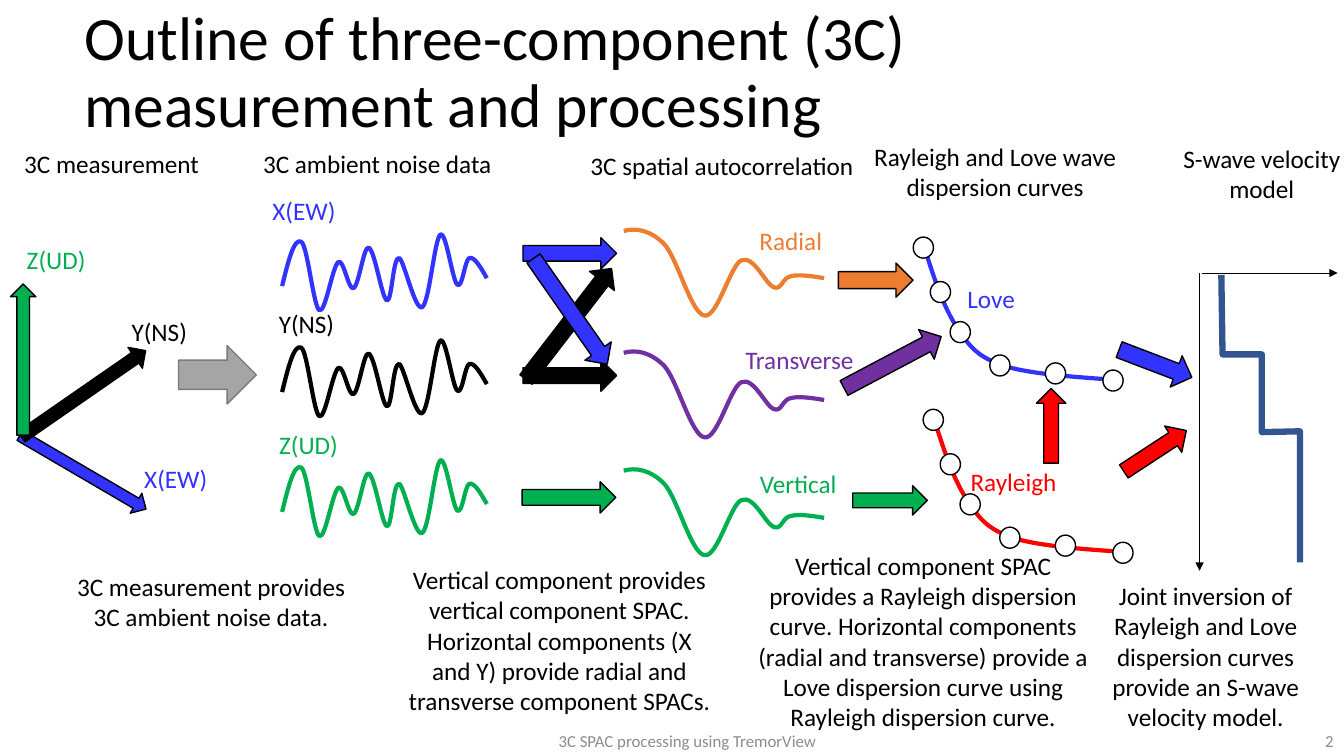
import pptx
import pptx.dml.color
import pptx.enum.shapes
import pptx.enum.text
import pptx.oxml.ns
import pptx.util
from lxml import etree

Cm = pptx.util.Cm
Pt = pptx.util.Pt
qn = pptx.oxml.ns.qn
RGB = pptx.dml.color.RGBColor.from_string
Preset = pptx.enum.shapes.MSO_SHAPE
Align = pptx.enum.text.PP_ALIGN
Anchor = pptx.enum.text.MSO_ANCHOR


class Theme:
    font = "Calibri"
    title_size, body_size, footer_size = Pt(44), Pt(18), Pt(12)
    curve_width, model_width, outline_width, axis_width = Pt(3), Pt(4.5), Pt(1), Pt(0.5)
    black, white = RGB("000000"), RGB("FFFFFF")
    blue, green, red = RGB("3333FF"), RGB("00B050"), RGB("FF0000")
    orange, purple, navy = RGB("ED7D31"), RGB("7030A0"), RGB("325491")
    gray, dark_gray, footer = RGB("A5A5A5"), RGB("7A7A7A"), RGB("8C8C8C")


presentation = pptx.Presentation()
presentation.slide_width, presentation.slide_height = Cm(33.87), Cm(19.05)
slide = presentation.slides.add_slide(presentation.slide_layouts[6])
shapes = slide.shapes


def add_text(text, left, top, width, height, color=Theme.black, size=Theme.body_size,
             align=Align.CENTER, anchor=Anchor.TOP):
    box = shapes.add_textbox(Cm(left), Cm(top), Cm(width), Cm(height))
    frame = box.text_frame
    frame.word_wrap = True
    frame.vertical_anchor = anchor
    paragraph = frame.paragraphs[0]
    paragraph.text = text
    paragraph.alignment = align
    paragraph.font.name = Theme.font
    paragraph.font.size = size
    paragraph.font.color.rgb = color
    return paragraph


def add_open_path(left, top, offsets, color, width, curved=True):
    """Draw from (left, top) through offsets; curved paths take them in threes as Bezier points."""
    builder = shapes.build_freeform(Cm(left), Cm(top))
    builder.add_line_segments([(Cm(left + x), Cm(top + y)) for x, y in offsets], close=False)
    shape = builder.convert_to_shape()
    shape.shadow.inherit = False
    shape.fill.background()
    shape.line.color.rgb = color
    shape.line.width = width
    if curved:
        path = shape._element.find(".//" + qn("a:path"))
        segments = path.findall(qn("a:lnTo"))
        for first in range(0, len(segments), 3):
            curve = etree.SubElement(path, qn("a:cubicBezTo"))
            for segment in segments[first:first + 3]:
                curve.append(segment[0])
                path.remove(segment)


# Title and column headings
title = add_text("Outline of three-component (3C) measurement and processing",
                 1.88, 0.03, 29.67, 3.68, size=Theme.title_size,
                 align=Align.LEFT, anchor=Anchor.MIDDLE)
title.line_spacing = 0.9
for heading, left, top, width in [
    ("3C measurement", 0.36, 3.61, 6.25),
    ("3C ambient noise data", 6.38, 3.61, 6.88),
    ("3C spatial autocorrelation", 14.63, 3.66, 7.8),
]:
    add_text(heading, left, top, width, 1.02, align=Align.LEFT)
add_text("Rayleigh and Love wave dispersion curves", 21.31, 3.43, 7.54, 1.8)
add_text("S-wave velocity model", 29.31, 3.48, 4.98, 1.8)

# Noise records and autocorrelation curves
noise_wave = [
    (0.15, -0.61), (0.3, -1.22), (0.48, -1.12), (0.64, -1.04), (0.79, 0.53), (0.94, 0.61),
    (1.09, 0.69), (1.27, -0.51), (1.42, -0.61), (1.55, -0.69), (1.68, 0.13), (1.8, 0.05),
    (1.93, 0), (2.06, -1.02), (2.18, -0.97), (2.34, -0.91), (2.51, 0.3), (2.64, 0.36),
    (2.77, 0.41), (2.79, -0.74), (2.95, -0.71), (3.07, -0.66), (3.35, 0.64), (3.53, 0.53),
    (3.71, 0.43), (3.84, -1.19), (3.99, -1.3), (4.14, -1.37), (4.29, -0.13), (4.42, -0.03),
    (4.55, 0.05), (4.6, -0.66), (4.72, -0.71), (4.85, -0.74), (5, -0.48), (5.16, -0.2),
]
for top, color in [(7.21, Theme.blue), (9.88, Theme.black), (12.9, Theme.green)]:
    add_open_path(7.11, top, noise_wave, color, Theme.curve_width)

autocorrelation = [
    (0.3, -0.08), (0.66, -0.03), (1.02, 0.33), (1.35, 0.69), (1.7, 2.08), (2.03, 2.13),
    (2.36, 2.21), (2.69, 0.84), (2.97, 0.74), (3.28, 0.61), (3.58, 1.35), (3.78, 1.42),
    (3.99, 1.5), (3.99, 1.17), (4.22, 1.14), (4.42, 1.09), (4.75, 1.14), (5.05, 1.19),
]
for top, color in [(5.82, Theme.orange), (8.89, Theme.purple), (11.86, Theme.green)]:
    add_open_path(15.72, top, autocorrelation, color, Theme.curve_width)

# Block arrows: left, top, width, height, rotation, fill
for left, top, width, height, rotation, color in [
    (0.25, 11.61, 3.68, 0.58, 30.3, Theme.blue),
    (0.2, 9.6, 3.81, 0.64, 325.3, Theme.black),
    (-1.32, 8.74, 3.81, 0.64, 270, Theme.green),
    (4.5, 8.71, 1.96, 1.47, 0, Theme.gray),
    (13.16, 12.14, 2.36, 0.79, 0, Theme.green),
    (13.18, 9.07, 2.36, 0.79, 0, Theme.black),
    (13.18, 5.99, 2.36, 0.79, 0, Theme.blue),
    (12.57, 7.77, 3.53, 0.79, 307.6, Theme.black),
    (12.75, 7.44, 3.25, 0.81, 55.1, Theme.blue),
    (21.49, 12.24, 1.88, 0.74, 0, Theme.green),
    (25.55, 10.36, 1.88, 0.74, 270, Theme.red),
    (21.11, 8.71, 2.77, 0.84, 332.1, Theme.purple),
    (21.13, 6.63, 1.88, 0.86, 0, Theme.orange),
    (28.17, 10.97, 1.88, 0.79, 326.8, Theme.red),
    (28.14, 8.74, 1.96, 0.84, 20.9, Theme.blue),
]:
    arrow = shapes.add_shape(Preset.RIGHT_ARROW, Cm(left), Cm(top), Cm(width), Cm(height))
    arrow.rotation = rotation
    arrow.shadow.inherit = False
    arrow.fill.solid()
    arrow.fill.fore_color.rgb = color
    arrow.line.color.rgb = Theme.dark_gray if color == Theme.gray else Theme.black
    arrow.line.width = Theme.outline_width

# Dispersion curves with their sample points
dispersion = [
    (0.23, 0.74), (0.46, 1.47), (0.79, 2.01), (1.12, 2.51), (1.27, 2.79), (1.96, 3.05),
    (2.67, 3.28), (3.81, 3.35), (4.95, 3.43),
]
sample_centers = [(0, 0.09), (0.43, 1.21), (0.93, 2.22), (1.93, 3.06), (3.33, 3.26), (4.78, 3.44)]
sample_width, sample_height = 0.51, 0.53
for left, top, color in [(23.52, 10.49, Theme.red), (23.27, 6.15, Theme.blue)]:
    add_open_path(left, top, dispersion, color, Theme.curve_width)
    for x, y in sample_centers:
        sample = shapes.add_shape(
            Preset.OVAL, Cm(left + x - sample_width / 2), Cm(top + y - sample_height / 2),
            Cm(sample_width), Cm(sample_height))
        sample.shadow.inherit = False
        sample.fill.solid()
        sample.fill.fore_color.rgb = Theme.white
        sample.line.color.rgb = Theme.black
        sample.line.width = Theme.outline_width

# Velocity model: depth and velocity axes, then the stepped profile
for start_x, end_x, end_y in [(30.23, 30.23, 14.38), (30.28, 33.71, 6.88)]:
    axis = shapes.add_connector(pptx.enum.shapes.MSO_CONNECTOR.STRAIGHT,
                                Cm(start_x), Cm(6.88), Cm(end_x), Cm(end_y))
    axis.line.color.rgb = Theme.black
    axis.line.width = Theme.axis_width
    etree.SubElement(axis.line._get_or_add_ln(), qn("a:tailEnd"), type="triangle")
    etree.SubElement(axis._element.spPr, qn("a:effectLst"))
velocity_steps = [(0.03, 2), (1.02, 2), (1.02, 3.96), (1.98, 3.94), (1.98, 7.24)]
add_open_path(30.78, 6.93, velocity_steps, Theme.navy, Theme.model_width, curved=False)

# Component and curve labels
for label, left, top, width, color in [
    ("Y(NS)", 2.39, 7.85, 3.25, Theme.black),
    ("X(EW)", 2.92, 11.56, 3.02, Theme.blue),
    ("Z(UD)", 0.41, 6.02, 2.01, Theme.green),
    ("X(EW)", 6.15, 4.8, 3.02, Theme.blue),
    ("Y(NS)", 6.1, 7.65, 3.25, Theme.black),
    ("Z(UD)", 6.15, 10.69, 3.25, Theme.green),
    ("Radial", 18.42, 5.56, 3.02, Theme.orange),
    ("Transverse", 18.52, 8.56, 3.25, Theme.purple),
    ("Vertical", 18.49, 11.68, 3.25, Theme.green),
]:
    add_text(label, left, top, width, 1.02, color)
add_text("Rayleigh", 24.21, 11.63, 3.58, 1.02, Theme.red, align=Align.LEFT)
add_text("Love", 24.13, 7.01, 3.58, 1.02, Theme.blue, align=Align.LEFT)

# Explanations and footer
for explanation, left, top, width, height in [
    ("3C measurement provides 3C ambient noise data.", 1.65, 14.27, 7.34, 1.8),
    ("Vertical component provides vertical component SPAC. Horizontal components (X and Y) "
     "provide radial and transverse component SPACs.", 10.01, 14.1, 8.18, 4.11),
    ("Vertical component SPAC provides a Rayleigh dispersion curve. Horizontal components "
     "(radial and transverse) provide a Love dispersion curve using Rayleigh dispersion curve.",
     18.72, 13.74, 9.09, 4.88),
    ("Joint inversion of Rayleigh and Love dispersion curves provide an S-wave velocity model.",
     26.92, 14.5, 6.93, 4.11),
]:
    add_text(explanation, left, top, width, height)
add_text("3C SPAC processing using TremorView", 11.61, 18.29, 11.43, 0.76,
         Theme.footer, Theme.footer_size, anchor=Anchor.MIDDLE)
add_text("2", 26.24, 18.29, 7.62, 0.76, Theme.footer, Theme.footer_size,
         Align.RIGHT, Anchor.MIDDLE)

presentation.save("out.pptx")
